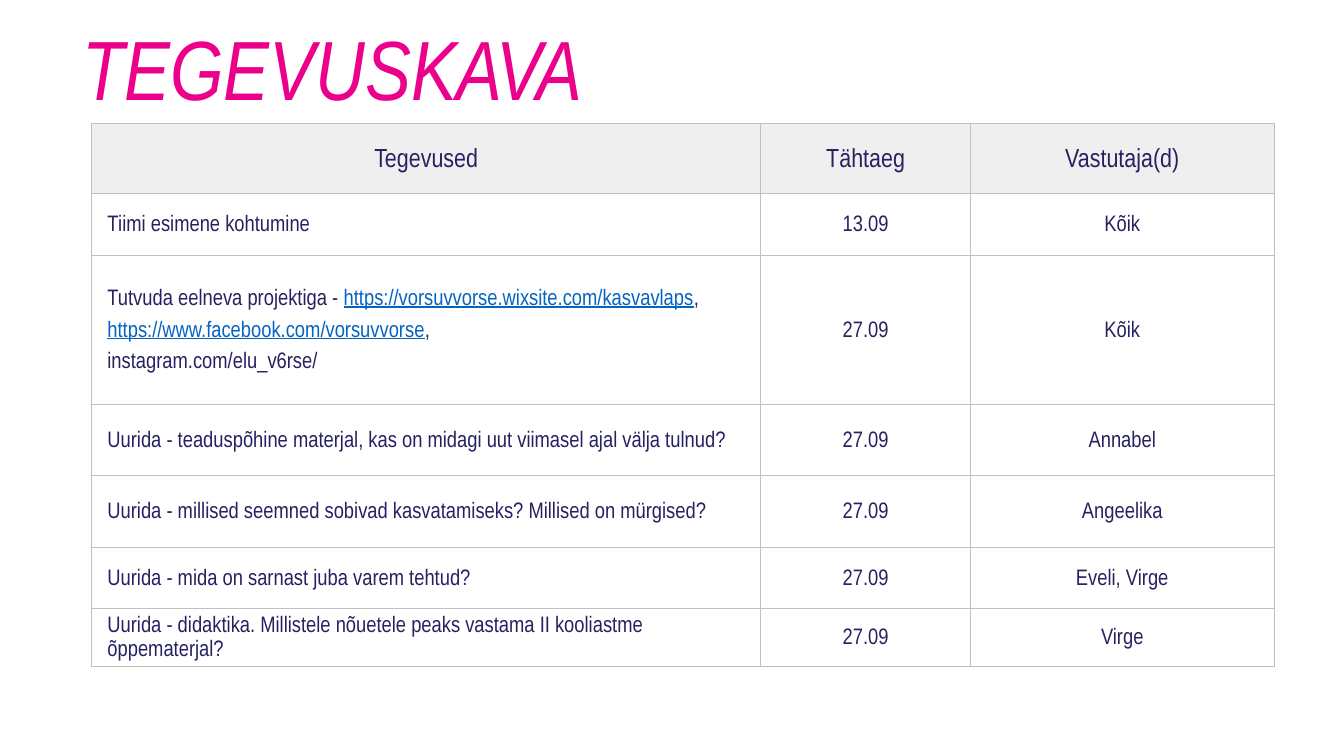
"""Build the TEGEVUSKAVA slide: a title above a table of tasks, deadlines and people."""
from lxml import etree
from pptx import Presentation
from pptx import util as u
from pptx.dml.color import RGBColor
from pptx.enum import text
from pptx.oxml import ns

COLORS = {"title": "EC008B", "ink": "262261", "link": "0563C1",
          "header": "EFEFF0", "border": "BFBFBF"}
FONT = "Arial Narrow"


def add_run(paragraph, wording, color, **format_values):
    run = paragraph.add_run()
    run.text = wording
    run.font.color.rgb = RGBColor.from_string(COLORS[color])
    for name, value in {"name": FONT, "bold": False, **format_values}.items():
        setattr(run.font, name, value)


def add_borders(cell):
    properties = cell._tc.get_or_add_tcPr()
    for position, side in enumerate(("lnL", "lnR", "lnT", "lnB")):
        line = etree.Element(ns.qn(f"a:{side}"), w=str(u.Pt(0.5)))
        fill = etree.SubElement(line, ns.qn("a:solidFill"))
        etree.SubElement(fill, ns.qn("a:srgbClr"), val=COLORS["border"])
        properties.insert(position, line)


presentation = Presentation()
presentation.slide_width, presentation.slide_height = u.Cm(25.4), u.Cm(14.29)
slide = presentation.slides.add_slide(presentation.slide_layouts[5])

title = slide.shapes.title
title_place = {"left": 1.3, "top": 0.5, "width": 12.4, "height": 1.84}
for name, value in title_place.items():
    setattr(title, name, u.Cm(value))
title_format = {"vertical_anchor": text.MSO_ANCHOR.BOTTOM, "word_wrap": True,
                "auto_size": text.MSO_AUTO_SIZE.NONE}
for name, value in title_format.items():
    setattr(title.text_frame, name, value)
heading = title.text_frame.paragraphs[0]
heading.alignment = text.PP_ALIGN.LEFT
add_run(heading, "TEGEVUSKAVA", "title", size=u.Pt(45), italic=True)

project_links = [
    [("Tutvuda eelneva projektiga - ", "ink"),
     ("https://vorsuvvorse.wixsite.com/kasvavlaps", "link"), (",", "ink")],
    [("https://www.facebook.com/vorsuvvorse", "link"), (",", "ink")],
    [("instagram.com/elu_v6rse/", "ink")],
]
plan = [
    (1.32, "Tegevused", "Tähtaeg", "Vastutaja(d)"),
    (1.16, "Tiimi esimene kohtumine", "13.09", "Kõik"),
    (2.82, project_links, "27.09", "Kõik"),
    (1.35, "Uurida - teaduspõhine materjal, kas on midagi uut viimasel ajal välja tulnud?",
     "27.09", "Annabel"),
    (1.35, "Uurida - millised seemned sobivad kasvatamiseks? Millised on mürgised?",
     "27.09", "Angeelika"),
    (1.16, "Uurida - mida on sarnast juba varem tehtud?", "27.09", "Eveli, Virge"),
    (1.1, "Uurida - didaktika. Millistele nõuetele peaks vastama II kooliastme õppematerjal?",
     "27.09", "Virge"),
]
column_widths = [12.65, 3.96, 5.74]
cell_format = {"vertical_anchor": text.MSO_ANCHOR.MIDDLE,
               "margin_left": u.Cm(0.3), "margin_right": u.Cm(0.3),
               "margin_top": 0, "margin_bottom": 0}

schedule = slide.shapes.add_table(
    len(plan), len(column_widths), u.Cm(1.73), u.Cm(2.34),
    u.Cm(sum(column_widths)), u.Cm(sum(row[0] for row in plan))).table
schedule.horz_banding = False
for column, width in zip(schedule.columns, column_widths):
    column.width = u.Cm(width)

for row_index, (height, *entries) in enumerate(plan):
    schedule.rows[row_index].height = u.Cm(height)
    is_header = row_index == 0
    for column_index, entry in enumerate(entries):
        cell = schedule.cell(row_index, column_index)
        for name, value in cell_format.items():
            setattr(cell, name, value)
        if is_header:
            cell.fill.solid()
            cell.fill.fore_color.rgb = RGBColor.from_string(COLORS["header"])
        else:
            cell.fill.background()
        add_borders(cell)

        centred = is_header or column_index > 0
        lines = [[(entry, "ink")]] if isinstance(entry, str) else entry
        for line_index, pieces in enumerate(lines):
            frame = cell.text_frame
            paragraph = frame.add_paragraph() if line_index else frame.paragraphs[0]
            paragraph_format = {
                "alignment": text.PP_ALIGN.CENTER if centred else text.PP_ALIGN.LEFT,
                "line_spacing": 1.15,
                "space_before": u.Pt(4 if line_index else 0)}
            for name, value in paragraph_format.items():
                setattr(paragraph, name, value)
            for wording, color in pieces:
                add_run(paragraph, wording, color, size=u.Pt(14 if is_header else 12),
                        underline=color == "link")

presentation.save("out.pptx")
